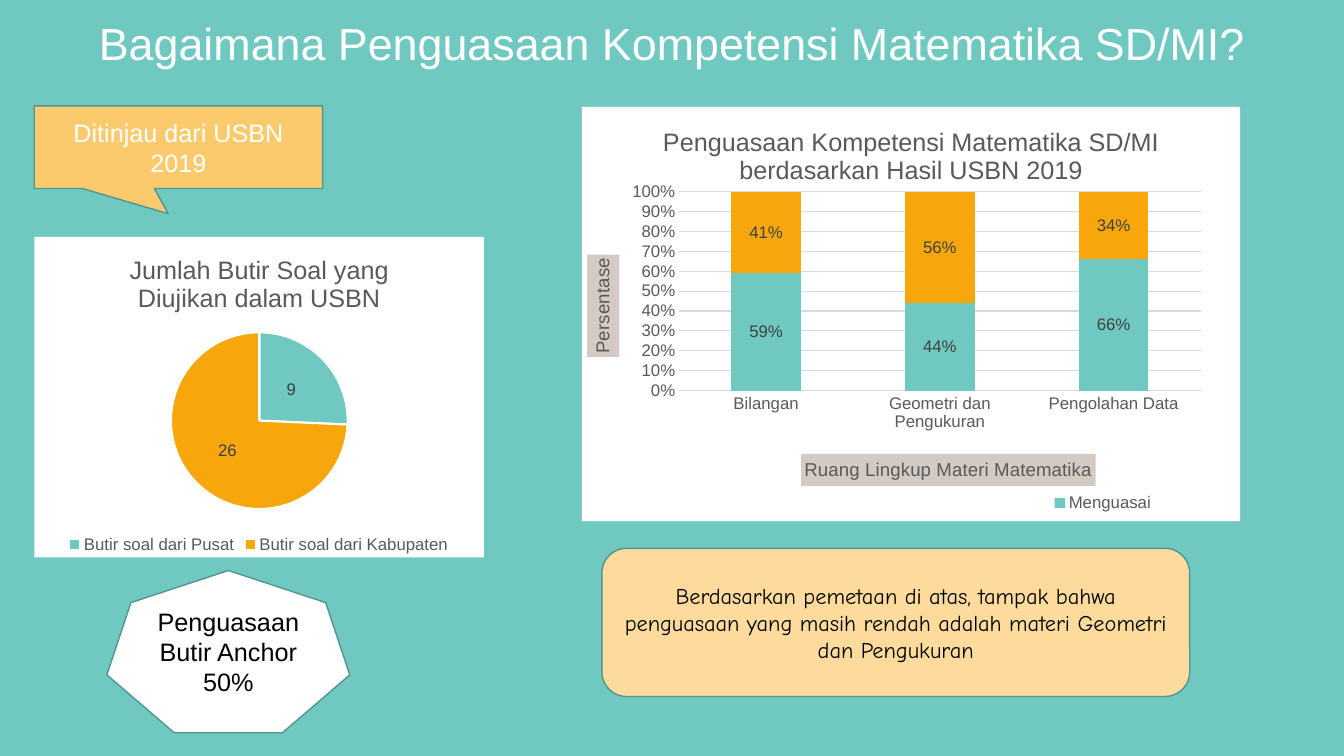
import pptx
import pptx.util
import pptx.oxml
import pptx.oxml.ns
import pptx.chart.data
import pptx.dml.color
import pptx.enum.chart
import pptx.enum.shapes
import pptx.enum.text

Inches = pptx.util.Inches
Pt = pptx.util.Pt
CENTER = pptx.enum.text.PP_ALIGN.CENTER
MIDDLE = pptx.enum.text.MSO_ANCHOR.MIDDLE
SHAPES = pptx.enum.shapes.MSO_SHAPE
CHARTS = pptx.enum.chart.XL_CHART_TYPE
NS = pptx.oxml.ns.nsdecls("c", "a")
COLORS = {
    "teal": "6FC9C1", "orange": "F7A60B", "white": "FFFFFF", "black": "000000",
    "outline": "52958F", "callout": "FACA6D", "note": "FCDB9D",
    "gray": "595959", "label": "404040", "grid": "D9D9D9", "axis_title": "D3CAC3",
}


def style_font(font, size, color, name="Arial"):
    font.size = Pt(size)
    font.name = name
    font.bold = False
    font.color.rgb = pptx.dml.color.RGBColor.from_string(COLORS[color])


def set_layout(parent, previous, inner=False, **parts):
    for old in parent.findall(pptx.oxml.ns.qn("c:layout")):
        parent.remove(old)
    target = '<c:layoutTarget val="inner"/>' if inner else ""
    modes = "".join(f'<c:{key}Mode val="edge"/>' for key in "xy")
    values = "".join(f'<c:{key} val="{value}"/>' for key, value in parts.items())
    layout = pptx.oxml.parse_xml(
        f"<c:layout {NS}><c:manualLayout>{target}{modes}{values}</c:manualLayout></c:layout>")
    if previous is None:
        parent.insert(0, layout)
    else:
        previous.addnext(layout)


rgb = pptx.dml.color.RGBColor.from_string
deck = pptx.Presentation()
deck.slide_width = Inches(13.33)
deck.slide_height = Inches(7.5)
page = deck.slides.add_slide(deck.slide_layouts[5])
page.background.fill.solid()
page.background.fill.fore_color.rgb = rgb(COLORS["teal"])

title = page.shapes.title
title.left, title.top = Inches(0.34), Inches(0.16)
title.width, title.height = Inches(12.66), Inches(0.59)
title.text_frame.text = "Bagaimana Penguasaan Kompetensi Matematika SD/MI?"
title.text_frame.vertical_anchor = MIDDLE
title.text_frame.auto_size = pptx.enum.text.MSO_AUTO_SIZE.NONE
para = title.text_frame.paragraphs[0]
para.alignment = CENTER
para.line_spacing = 0.9
style_font(para.font, 32, "white")

pie_data = pptx.chart.data.CategoryChartData()
pie_data.categories = ["Butir soal dari Pusat", "Butir soal dari Kabupaten"]
pie_data.add_series("Series 1", [9, 26])

mastery_data = pptx.chart.data.CategoryChartData(number_format="0%")
mastery_data.categories = ["Bilangan", "Geometri dan Pengukuran", "Pengolahan Data"]
mastery_data.add_series("Menguasai", [0.59, 0.44, 0.66])
mastery_data.add_series("Belum Menguasai", [0.41, 0.56, 0.34])

chart_specs = [
    (CHARTS.PIE, 0.34, 2.35, 4.46, 3.18, pie_data, "0",
     "Jumlah Butir Soal yang Diujikan dalam USBN",
     {"x": 0.304, "y": 0.297, "w": 0.393, "h": 0.553}),
    (CHARTS.COLUMN_STACKED, 5.77, 1.06, 6.53, 4.11, mastery_data, "0%",
     "Penguasaan Kompetensi Matematika SD/MI berdasarkan Hasil USBN 2019",
     {"x": 0.148, "y": 0.205, "w": 0.792, "h": 0.48}),
]
charts = []
for kind, left, top, width, height, data, number_format, heading, plot_box in chart_specs:
    chart = page.shapes.add_chart(
        kind, Inches(left), Inches(top), Inches(width), Inches(height), data).chart
    style_font(chart.font, 10, "black")
    chart.has_title = True
    chart.chart_title.text_frame.text = heading
    style_font(chart.chart_title.text_frame.paragraphs[0].font, 18, "gray")
    chart.chart_title.include_in_layout = False
    chart.has_legend = True
    chart.legend.position = pptx.enum.chart.XL_LEGEND_POSITION.BOTTOM
    chart.legend.include_in_layout = False
    style_font(chart.legend.font, 12, "gray")
    plot = chart.plots[0]
    plot.has_data_labels = True
    labels = plot.data_labels
    labels.show_value = True
    labels.show_percentage = False
    labels.number_format = number_format
    labels.number_format_is_linked = False
    labels.position = pptx.enum.chart.XL_LABEL_POSITION.CENTER
    style_font(labels.font, 12, "label")
    set_layout(chart._chartSpace.chart.plotArea, None, inner=True, **plot_box)
    chart._chartSpace.chart.addnext(pptx.oxml.parse_xml(
        f'<c:spPr {NS}><a:solidFill><a:srgbClr val="{COLORS["white"]}"/></a:solidFill>'
        "<a:ln><a:noFill/></a:ln></c:spPr>"))
    charts.append(chart)

pie, mastery = charts
pie.plots[0].vary_by_categories = True
mastery.plots[0].vary_by_categories = False
for index, color in enumerate(["teal", "orange"]):
    point = pie.plots[0].series[0].points[index]
    point.format.line.color.rgb = rgb(COLORS["white"])
    point.format.line.width = Pt(1.5)
    for item in (point, mastery.plots[0].series[index]):
        item.format.fill.solid()
        item.format.fill.fore_color.rgb = rgb(COLORS[color])

mastery.plots[0].gap_width = 150
mastery.plots[0].overlap = 100
category_axis, value_axis = mastery.category_axis, mastery.value_axis
for axis, name, x, y in [
    (category_axis, "Ruang Lingkup Materi Matematika", 0.333, 0.838),
    (value_axis, "Persentase", 0.008, 0.357),
]:
    axis.major_tick_mark = pptx.enum.chart.XL_TICK_MARK.NONE
    axis.minor_tick_mark = pptx.enum.chart.XL_TICK_MARK.NONE
    style_font(axis.tick_labels.font, 12, "gray")
    axis.has_title = True
    axis_title = axis.axis_title
    axis_title.text_frame.text = name
    style_font(axis_title.text_frame.paragraphs[0].font, 13.3, "gray")
    axis_title.format.fill.solid()
    axis_title.format.fill.fore_color.rgb = rgb(COLORS["axis_title"])
    element = axis_title._element
    set_layout(element, element.find(pptx.oxml.ns.qn("c:tx")), x=x, y=y)
value_axis.axis_title.text_frame._txBody.bodyPr.set("rot", "-5400000")
value_axis.axis_title.text_frame._txBody.bodyPr.set("vert", "horz")
value_axis.minimum_scale = 0
value_axis.maximum_scale = 1
value_axis.major_unit = 0.1
value_axis.tick_labels.number_format = "0%"
value_axis.tick_labels.number_format_is_linked = False
value_axis.format.line.fill.background()
value_axis.has_major_gridlines = True
for line in (category_axis.format.line, value_axis.major_gridlines.format.line):
    line.color.rgb = rgb(COLORS["grid"])
    line.width = Pt(0.75)

legend = mastery.legend._element
entry = pptx.oxml.parse_xml(
    f'<c:legendEntry {NS}><c:idx val="1"/><c:delete val="1"/></c:legendEntry>')
legend.find(pptx.oxml.ns.qn("c:legendPos")).addnext(entry)
set_layout(legend, entry, x=0.71, y=0.925)

for kind, left, top, width, height, fill, lines, size, color, font_name in [
    (SHAPES.HEPTAGON, 1.06, 5.66, 2.41, 1.61, "white",
     ["Penguasaan Butir Anchor", "50%"], 18, "black", "Arial"),
    (SHAPES.RECTANGULAR_CALLOUT, 0.34, 1.05, 2.86, 0.82, "callout",
     ["Ditinjau dari USBN 2019"], 18, "white", "Arial"),
    (SHAPES.ROUNDED_RECTANGLE, 5.97, 5.44, 5.83, 1.47, "note",
     ["Berdasarkan pemetaan di atas, tampak bahwa penguasaan yang masih rendah "
      "adalah materi Geometri dan Pengukuran"], 16, "black", "Comic Neue"),
]:
    box = page.shapes.add_shape(kind, Inches(left), Inches(top), Inches(width), Inches(height))
    box.shadow.inherit = False
    box.fill.solid()
    box.fill.fore_color.rgb = rgb(COLORS[fill])
    box.line.color.rgb = rgb(COLORS["outline"])
    box.line.width = Pt(1)
    if kind == SHAPES.RECTANGULAR_CALLOUT:
        box.adjustments[0] = -0.036
        box.adjustments[1] = 0.804
    box.text_frame.word_wrap = True
    box.text_frame.vertical_anchor = MIDDLE
    box.text_frame.text = "\n".join(lines)
    for para in box.text_frame.paragraphs:
        para.alignment = CENTER
        style_font(para.font, size, color, font_name)

deck.save("out.pptx")
